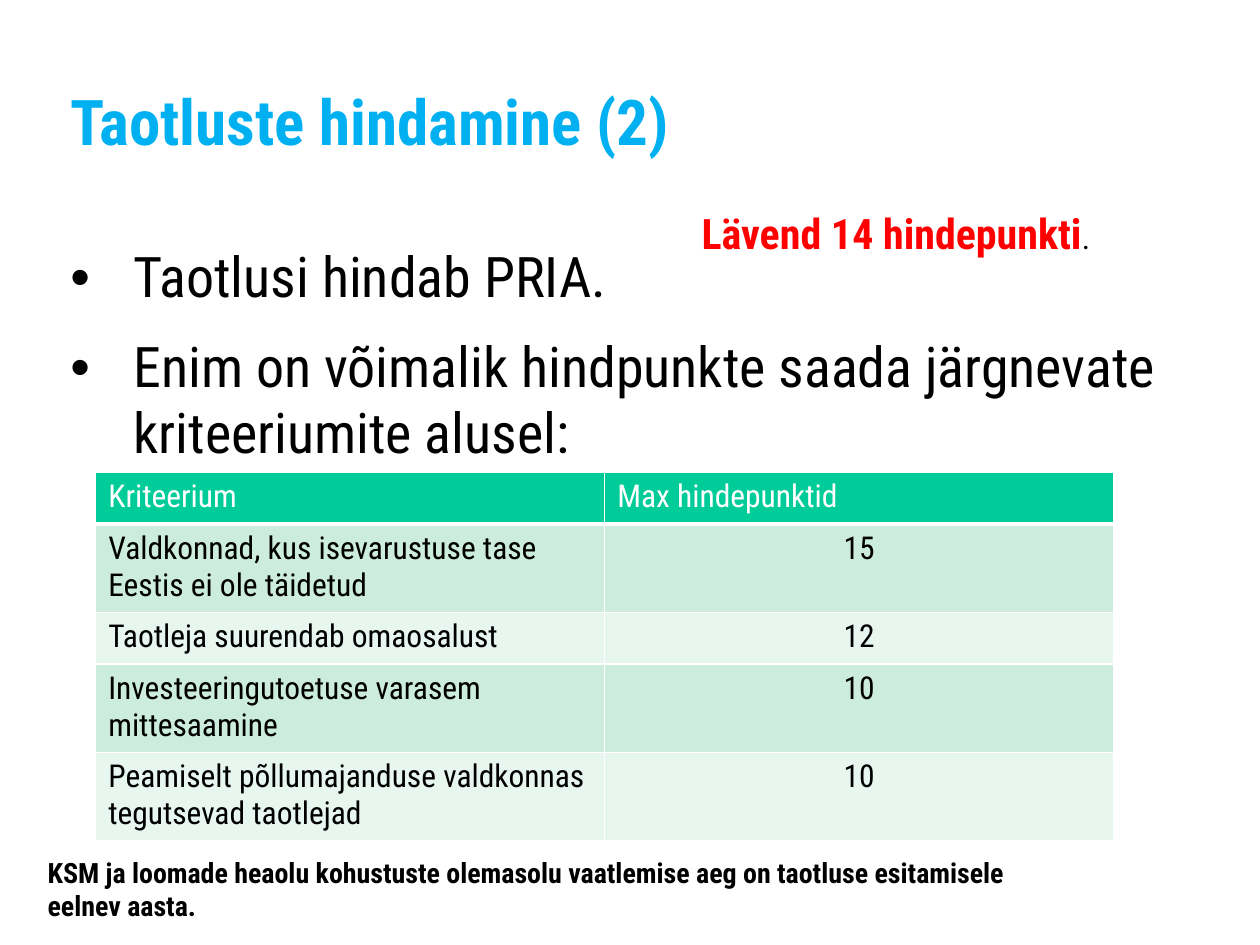
from pptx import Presentation
from pptx.dml.color import RGBColor
from pptx.enum.text import MSO_ANCHOR, PP_ALIGN
from pptx.oxml import parse_xml
from pptx.oxml.ns import nsdecls
from pptx.util import Inches, Pt

# Content
FONT = "Roboto Condensed"
TITLE = "Taotluste hindamine (2)"
BULLETS = [
    "Taotlusi hindab PRIA.",
    "Enim on võimalik hindpunkte saada järgnevate kriteeriumite alusel:",
]
THRESHOLD = "Lävend 14 hindepunkti"
CRITERIA = [
    ("Kriteerium", "Max hindepunktid"),
    ("Valdkonnad, kus isevarustuse tase Eestis ei ole täidetud", "15"),
    ("Taotleja suurendab omaosalust", "12"),
    ("Investeeringutoetuse varasem mittesaamine", "10"),
    ("Peamiselt põllumajanduse valdkonnas tegutsevad taotlejad", "10"),
]
ROW_HEIGHTS = [0.41, 0.7, 0.41, 0.7, 0.7]
FOOTNOTE = [
    "KSM ja loomade heaolu kohustuste olemasolu vaatlemise aeg on taotluse esitamisele",
    "eelnev aasta.",
]
HEADER_FILL, BAND_FILLS = "00CC99", ("E7F6EF", "CCECDE")
BLACK, WHITE, RED, BLUE = "000000", "FFFFFF", "FF0000", "00B0F0"


def color(value):
    return RGBColor.from_string(value)


def add_span(para, text, size, fill, bold=False):
    span = para.add_run()
    span.text = text
    span.font.name = FONT
    span.font.size = Pt(size)
    span.font.bold = bold
    span.font.color.rgb = color(fill)


def add_box(page, left, top, width, height, wrap=True, margins=(0.1, 0.05)):
    box = page.shapes.add_textbox(*map(Inches, (left, top, width, height)))
    frame = box.text_frame
    frame.word_wrap = wrap
    frame.margin_left = frame.margin_right = Inches(margins[0])
    frame.margin_top = frame.margin_bottom = Inches(margins[1])
    return frame


def add_paras(frame, texts, size, fill, bold=False):
    for number, text in enumerate(texts):
        para = frame.paragraphs[0] if number == 0 else frame.add_paragraph()
        add_span(para, text, size, fill, bold)


def set_bullet(para, indent):
    properties = para._p.get_or_add_pPr()
    properties.set("marL", str(Inches(indent)))
    properties.set("indent", str(-Inches(indent)))
    for xml in (
        f'<a:buClr {nsdecls("a")}><a:srgbClr val="{BLACK}"/></a:buClr>',
        f'<a:buFont {nsdecls("a")} typeface="Arial"/>',
        f'<a:buChar {nsdecls("a")} char="•"/>',
    ):
        properties.append(parse_xml(xml))


def set_borders(cell, bottom):
    properties = cell._tc.get_or_add_tcPr()
    sides = {"lnL": 1, "lnR": 1, "lnT": 1, "lnB": bottom}
    for place, (side, width) in enumerate(sides.items()):
        properties.insert(place, parse_xml(
            f'<a:{side} {nsdecls("a")} w="{Pt(width)}"><a:solidFill>'
            f'<a:srgbClr val="{WHITE}"/></a:solidFill></a:{side}>'))


def add_criteria(page):
    shape = page.shapes.add_table(
        len(CRITERIA), 2, Inches(0.76), Inches(3.75),
        Inches(8.08), Inches(sum(ROW_HEIGHTS)))
    table = shape.table
    for row, (texts, height) in enumerate(zip(CRITERIA, ROW_HEIGHTS)):
        table.rows[row].height = Inches(height)
        header = row == 0
        for column, text in enumerate(texts):
            cell = table.cell(row, column)
            cell.fill.solid()
            cell.fill.fore_color.rgb = color(HEADER_FILL if header else BAND_FILLS[row % 2])
            set_borders(cell, 3 if header else 1)
            para = cell.text_frame.paragraphs[0]
            if column and not header:
                para.alignment = PP_ALIGN.CENTER
            add_span(para, text, 18, WHITE if header else BLACK)


def main():
    deck = Presentation()
    deck.slide_width, deck.slide_height = Inches(10), Inches(7.5)
    page = deck.slides.add_slide(deck.slide_layouts[6])

    # Title
    title = add_box(page, 0.56, 0.33, 8.84, 1.38, margins=(0, 0))
    title.vertical_anchor = MSO_ANCHOR.MIDDLE
    add_paras(title, [TITLE], 36, BLUE, bold=True)
    title.paragraphs[0].line_spacing = 0.77

    # Bullet points
    body = add_box(page, 0.56, 1.94, 8.84, 4.95, margins=(0, 0.01))
    add_paras(body, BULLETS, 32, BLACK)
    for para in body.paragraphs:
        para.line_spacing = 0.97
        para.space_after = Pt(14.2)
        set_bullet(para, 0.5)

    add_criteria(page)

    # Threshold and footnote
    threshold = add_box(page, 5.47, 1.6, 3.3, 0.51, wrap=False)
    add_paras(threshold, [THRESHOLD], 24, RED, bold=True)
    add_span(threshold.paragraphs[0], ".", 18, BLACK)
    footnote = add_box(page, 0.28, 6.74, 7.93, 0.64, wrap=False)
    add_paras(footnote, FOOTNOTE, 16, BLACK, bold=True)

    deck.save("out.pptx")


if __name__ == "__main__":
    main()
